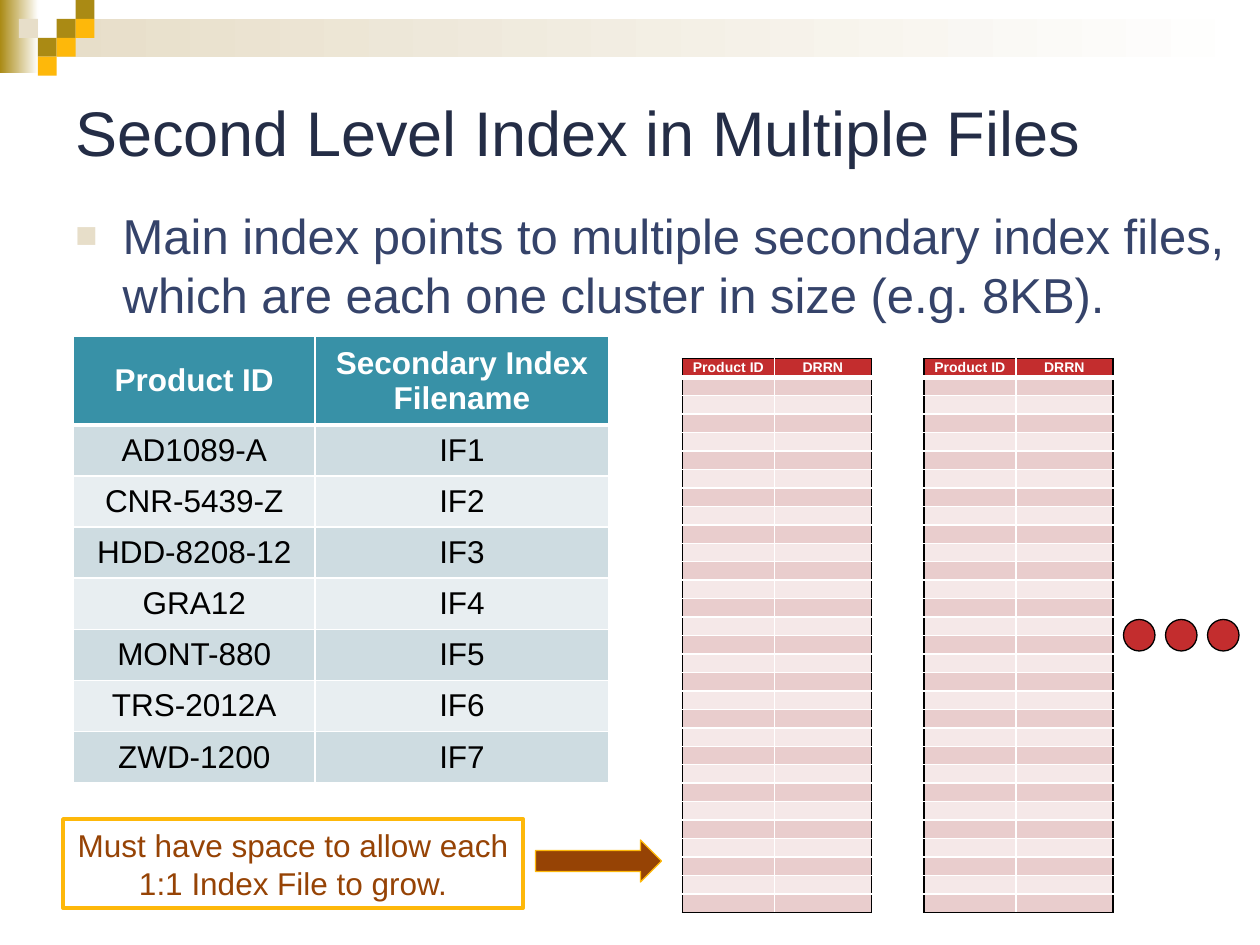
"""Build the slide on a second level index spread over multiple files."""
from dataclasses import dataclass

from lxml import etree
from pptx import Presentation
from pptx import util as u
from pptx.dml.color import RGBColor
from pptx.enum import shapes, text
from pptx.oxml.ns import qn

WHITE = RGBColor(0xFF, 0xFF, 0xFF)
BLACK = RGBColor(0, 0, 0)
OLIVE = RGBColor(0xAA, 0x8A, 0x14)
AMBER = RGBColor(0xFE, 0xB8, 0x0A)
SAND = RGBColor(0xE7, 0xDE, 0xC9)
NAVY = RGBColor(0x24, 0x2D, 0x46)
SLATE = RGBColor(0x35, 0x43, 0x6A)
TEAL = RGBColor(0x38, 0x91, 0xA7)
TEAL_BANDS = (RGBColor(0xCE, 0xDC, 0xE1), RGBColor(0xE8, 0xEE, 0xF1))
RED = RGBColor(0xC3, 0x2D, 0x2E)
RED_BANDS = (RGBColor(0xE9, 0xCD, 0xCD), RGBColor(0xF5, 0xE8, 0xE8))
BROWN = RGBColor(0x96, 0x43, 0x05)

FONT = "Arial"
TILE = 10.8
HEADER_RULE = 3


@dataclass(frozen=True)
class Area:
    left: float
    top: float
    width: float
    height: float

    def lengths(self) -> list:
        return [u.Pt(n) for n in (self.left, self.top, self.width, self.height)]


@dataclass(frozen=True)
class Tile:
    column: int
    row: int
    color: RGBColor


@dataclass(frozen=True)
class IndexTable:
    left: float
    top: float
    columns: tuple
    header_height: float
    row_height: float
    rows: list
    header_fill: RGBColor
    bands: tuple
    size: float
    outline: RGBColor
    padded: bool


TILES = [Tile(3, 1, OLIVE), Tile(4, 0, OLIVE), Tile(4, 1, AMBER), Tile(2, 2, OLIVE),
         Tile(1, 1, SAND), Tile(3, 2, AMBER), Tile(2, 3, AMBER)]
PRODUCTS = ["AD1089-A", "CNR-5439-Z", "HDD-8208-12", "GRA12", "MONT-880", "TRS-2012A", "ZWD-1200"]
MAIN_ROWS = [("Product ID", "Secondary Index Filename")] + [
    (product, f"IF{number}") for number, product in enumerate(PRODUCTS, 1)]
FILE_ROWS = [("Product ID", "DRRN")] + [("", "")] * 29


def add_span(para, words: str, size: float, color: RGBColor, bold: bool = False) -> None:
    span = para.add_run()
    span.text = words
    span.font.name = FONT
    span.font.size = u.Pt(size)
    span.font.bold = bold
    span.font.color.rgb = color


def add_figure(page, kind, area: Area, fill: RGBColor, line=None, weight: float = 0.75):
    figure = page.shapes.add_shape(kind, *area.lengths())
    figure.shadow.inherit = False
    figure.fill.solid()
    figure.fill.fore_color.rgb = fill
    if line is None:
        figure.line.fill.background()
    else:
        figure.line.color.rgb = line
        figure.line.width = u.Pt(weight)
    return figure


def add_fade(page, area: Area, color: RGBColor) -> None:
    fade = add_figure(page, shapes.MSO_SHAPE.RECTANGLE, area, color)
    fade.fill.gradient()
    fade.fill.gradient_angle = 0
    for stop, shade in zip(fade.fill.gradient_stops, (color, WHITE)):
        stop.color.rgb = shade


def add_text(page, area: Area, words: str, size: float, color: RGBColor, anchor):
    box = page.shapes.add_textbox(*area.lengths())
    box.text_frame.word_wrap = True
    box.text_frame.vertical_anchor = anchor
    para = box.text_frame.paragraphs[0]
    add_span(para, words, size, color)
    return para


def add_bullet(para, indent: float, color: RGBColor) -> None:
    props = para._p.get_or_add_pPr()
    props.set("marL", str(u.Pt(indent)))
    props.set("indent", str(-u.Pt(indent)))
    tint = etree.SubElement(props, qn("a:buClr"))
    etree.SubElement(tint, qn("a:srgbClr"), val=str(color))
    etree.SubElement(props, qn("a:buSzPct"), val="75000")
    etree.SubElement(props, qn("a:buFont"), typeface=FONT)
    etree.SubElement(props, qn("a:buChar"), char="■")


def add_border(cell, side: str, color: RGBColor, weight: float) -> None:
    edge = etree.SubElement(cell._tc.get_or_add_tcPr(), qn(f"a:ln{side}"), w=str(u.Pt(weight)))
    fill = etree.SubElement(edge, qn("a:solidFill"))
    etree.SubElement(fill, qn("a:srgbClr"), val=str(color))


def style_cell(cell, row: int, column: int, spec_table: IndexTable) -> None:
    last_row, last_column = len(spec_table.rows) - 1, len(spec_table.columns) - 1
    outer = {"L": column == 0, "R": column == last_column, "T": row == 0, "B": row == last_row}
    ruled = {("B", 0), ("T", 1)}
    for side, is_outer in outer.items():
        add_border(cell, side, spec_table.outline if is_outer else WHITE,
                   HEADER_RULE if (side, row) in ruled else 1)
    cell.fill.solid()
    cell.fill.fore_color.rgb = spec_table.bands[(row - 1) % 2] if row else spec_table.header_fill
    cell.vertical_anchor = text.MSO_ANCHOR.MIDDLE
    if not spec_table.padded:
        cell.margin_left = cell.margin_right = cell.margin_top = cell.margin_bottom = 0


def add_index(page, index: IndexTable) -> None:
    height = index.header_height + index.row_height * (len(index.rows) - 1)
    area = Area(index.left, index.top, sum(index.columns), height)
    grid = page.shapes.add_table(len(index.rows), len(index.columns), *area.lengths()).table
    for column, width in enumerate(index.columns):
        grid.columns[column].width = u.Pt(width)
    for row, entries in enumerate(index.rows):
        grid.rows[row].height = u.Pt(index.row_height if row else index.header_height)
        for column, words in enumerate(entries):
            cell = grid.cell(row, column)
            style_cell(cell, row, column, index)
            para = cell.text_frame.paragraphs[0]
            para.alignment = text.PP_ALIGN.CENTER
            if words:
                add_span(para, words, index.size, BLACK if row else WHITE, bold=row == 0)
            else:
                etree.SubElement(para._p, qn("a:endParaRPr"), sz=str(int(index.size * 100)))


def add_callout(page, area: Area, lines: list) -> None:
    box = add_figure(page, shapes.MSO_SHAPE.RECTANGLE, area, WHITE, AMBER, 2)
    frame = box.text_frame
    frame.word_wrap = False
    frame.auto_size = text.MSO_AUTO_SIZE.SHAPE_TO_FIT_TEXT
    for number, words in enumerate(lines):
        para = frame.add_paragraph() if number else frame.paragraphs[0]
        para.alignment = text.PP_ALIGN.CENTER
        add_span(para, words, 18, BROWN)


def main() -> None:
    deck = Presentation()
    deck.slide_width, deck.slide_height = u.Pt(720), u.Pt(540)
    page = deck.slides.add_slide(deck.slide_layouts[6])

    add_fade(page, Area(0, 0, 22, 41.8), OLIVE)
    add_fade(page, Area(3 * TILE, TILE, 720 - 3 * TILE, 2 * TILE), SAND)
    for tile in TILES:
        area = Area(tile.column * TILE, tile.row * TILE, TILE, TILE)
        add_figure(page, shapes.MSO_SHAPE.RECTANGLE, area, tile.color)

    add_text(page, Area(36, 36, 648, 78), "Second Level Index in Multiple Files",
             36, NAVY, text.MSO_ANCHOR.MIDDLE)
    body = add_text(page, Area(36, 114, 672, 84),
                    "Main index points to multiple secondary index files, "
                    "which are each one cluster in size (e.g. 8KB).",
                    28, SLATE, text.MSO_ANCHOR.TOP)
    body.space_before = u.Pt(5.6)
    add_bullet(body, 27, SAND)

    add_index(page, IndexTable(42, 192.4, (138, 168), 46.8, 29.2, MAIN_ROWS,
                               TEAL, TEAL_BANDS, 18, WHITE, True))
    for left in (390, 528):
        add_index(page, IndexTable(left, 205, (52.5, 55.5), 10.55, 10.55, FILE_ROWS,
                                   RED, RED_BANDS, 8, BLACK, False))

    add_callout(page, Area(36, 468, 263, 51),
                ["Must have space to allow each", "1:1 Index File to grow."])
    add_figure(page, shapes.MSO_SHAPE.RIGHT_ARROW, Area(306, 480, 72, 24), BROWN, AMBER)
    for step in range(3):
        add_figure(page, shapes.MSO_SHAPE.OVAL, Area(642 + 24 * step, 354, 18, 18), RED, BLACK)

    deck.save("out.pptx")


if __name__ == "__main__":
    main()
